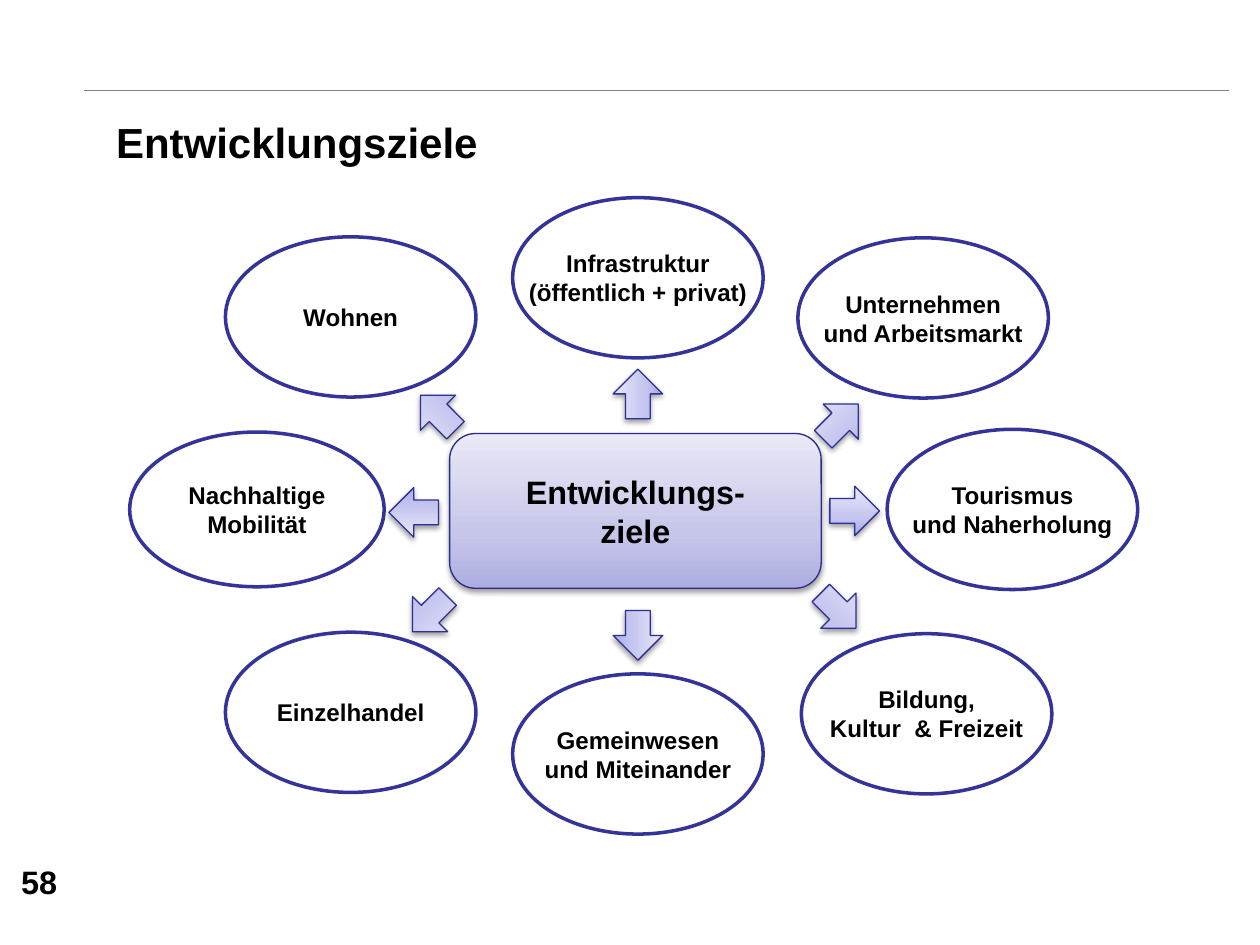
from dataclasses import dataclass
from lxml.etree import SubElement
from pptx import Presentation
from pptx.dml.color import RGBColor
from pptx.enum.shapes import MSO_CONNECTOR, MSO_SHAPE
from pptx.enum.text import MSO_ANCHOR, PP_ALIGN
from pptx.oxml.ns import qn
from pptx.util import Cm, Pt


@dataclass(frozen=True)
class Theme:
    font: str = "Arial"
    text: str = "000000"
    paper: str = "FFFFFF"
    rule: str = "808080"
    goal_line: str = "333399"
    hub_line: str = "2A2A89"
    arrow_line: str = "2F2F98"
    hub_stops: tuple = ((0, "ADADE1"), (35, "C6C6E9"), (100, "E9E9F7"))
    arrow_stops: tuple = ((0, "A9A9E9"), (35, "C4C4EF"), (100, "E8E8FA"))
    title_size: float = 24
    hub_size: float = 18.5
    goal_size: float = 13.8
    thin: float = 0.75
    thick: float = 2


THEME = Theme()
TITLE = "Entwicklungsziele"
PAGE_NUMBER = "58"
HUB = "Entwicklungs-\nziele"
HUB_CENTRE, HUB_SIZE = (12.81, 10.3), (7.49, 3.12)
GOAL_SIZE, ARROW_SIZE = (5.05, 3.23), (1, 1)

GOALS = [
    ("Tourismus\nund Naherholung", (20.41, 10.27), GOAL_SIZE),
    ("Unternehmen\nund Arbeitsmarkt", (18.61, 6.41), GOAL_SIZE),
    ("Gemeinwesen\nund Miteinander", (12.86, 15.2), GOAL_SIZE),
    ("Infrastruktur\n(öffentlich + privat)", (12.86, 5.6), GOAL_SIZE),
    ("Bildung,\nKultur  & Freizeit", (18.68, 14.39), GOAL_SIZE),
    ("Wohnen", (7.07, 6.39), GOAL_SIZE),
    ("Einzelhandel", (7.07, 14.36), GOAL_SIZE),
    ("Nachhaltige\nMobilität", (5.18, 10.27), (5.13, 3.12)),
]
ARROW_CENTRES = {
    0: (17.23, 10.3),
    45: (16.9, 12.31),
    90: (12.86, 12.81),
    135: (8.67, 12.38),
    180: (8.34, 10.33),
    225: (8.83, 8.32),
    270: (12.86, 7.94),
    315: (16.95, 8.5),
}


def write(part, text, size, align):
    part.text_frame.text = text
    for paragraph in part.text_frame.paragraphs:
        paragraph.alignment = align
        for run in paragraph.runs:
            run.font.name = THEME.font
            run.font.size = Pt(size)
            run.font.bold = True
            run.font.color.rgb = RGBColor.from_string(THEME.text)


def add_centred(slide, kind, centre, size, line, weight):
    left, top = (middle - extent / 2 for middle, extent in zip(centre, size))
    part = slide.shapes.add_shape(kind, Cm(left), Cm(top), Cm(size[0]), Cm(size[1]))
    part.shadow.inherit = False
    part.line.color.rgb = RGBColor.from_string(line)
    part.line.width = Pt(weight)
    part.text_frame.word_wrap = False
    part.text_frame.vertical_anchor = MSO_ANCHOR.MIDDLE
    return part


def add_glow(part, stops):
    part.fill.gradient()
    part.fill.gradient_angle = 90
    properties = part._element.spPr
    stop_list = properties.find(".//" + qn("a:gsLst"))
    stop_list.clear()
    for position, colour in stops:
        stop = SubElement(stop_list, qn("a:gs"), pos=str(position * 1000))
        SubElement(stop, qn("a:srgbClr"), val=colour)
    shadow = SubElement(properties.find(qn("a:effectLst")), qn("a:outerShdw"),
                        blurRad="40000", dist="20000", dir="5400000", rotWithShape="0")
    shade = SubElement(shadow, qn("a:srgbClr"), val="000000")
    SubElement(shade, qn("a:alpha"), val="38000")


def add_label(slide, text, box, size, align):
    label = slide.shapes.add_textbox(*map(Cm, box))
    label.text_frame.word_wrap = True
    write(label, text, size, align)
    return label.text_frame


def main():
    """Build the slide of development goals around their hub."""
    deck = Presentation()
    deck.slide_width, deck.slide_height = Cm(25.4), Cm(19.05)
    slide = deck.slides.add_slide(deck.slide_layouts[6])

    rule = slide.shapes.add_connector(MSO_CONNECTOR.STRAIGHT, Cm(1.7), Cm(1.83), Cm(24.77), Cm(1.83))
    rule.line.color.rgb = RGBColor.from_string(THEME.rule)
    rule.line.width = Pt(THEME.thin)
    SubElement(rule._element.spPr, qn("a:effectLst"))

    title = add_label(slide, TITLE, (2.34, 2.24, 18.85, 1.47), THEME.title_size, PP_ALIGN.LEFT)
    title.margin_left = title.margin_right = title.margin_bottom = 0
    title.margin_top = Cm(0.1)

    for text, centre, size in GOALS:
        goal = add_centred(slide, MSO_SHAPE.OVAL, centre, size, THEME.goal_line, THEME.thick)
        goal.fill.solid()
        goal.fill.fore_color.rgb = RGBColor.from_string(THEME.paper)
        write(goal, text, THEME.goal_size, PP_ALIGN.CENTER)

    hub = add_centred(slide, MSO_SHAPE.ROUNDED_RECTANGLE, HUB_CENTRE, HUB_SIZE, THEME.hub_line, THEME.thin)
    add_glow(hub, THEME.hub_stops)
    write(hub, HUB, THEME.hub_size, PP_ALIGN.CENTER)

    for angle, centre in ARROW_CENTRES.items():
        arrow = add_centred(slide, MSO_SHAPE.RIGHT_ARROW, centre, ARROW_SIZE, THEME.arrow_line, THEME.thin)
        arrow.rotation = angle
        add_glow(arrow, THEME.arrow_stops)

    add_label(slide, PAGE_NUMBER, (0, 17.25, 1.4, 1.04), THEME.hub_size, PP_ALIGN.RIGHT)
    deck.save("out.pptx")


if __name__ == "__main__":
    main()
